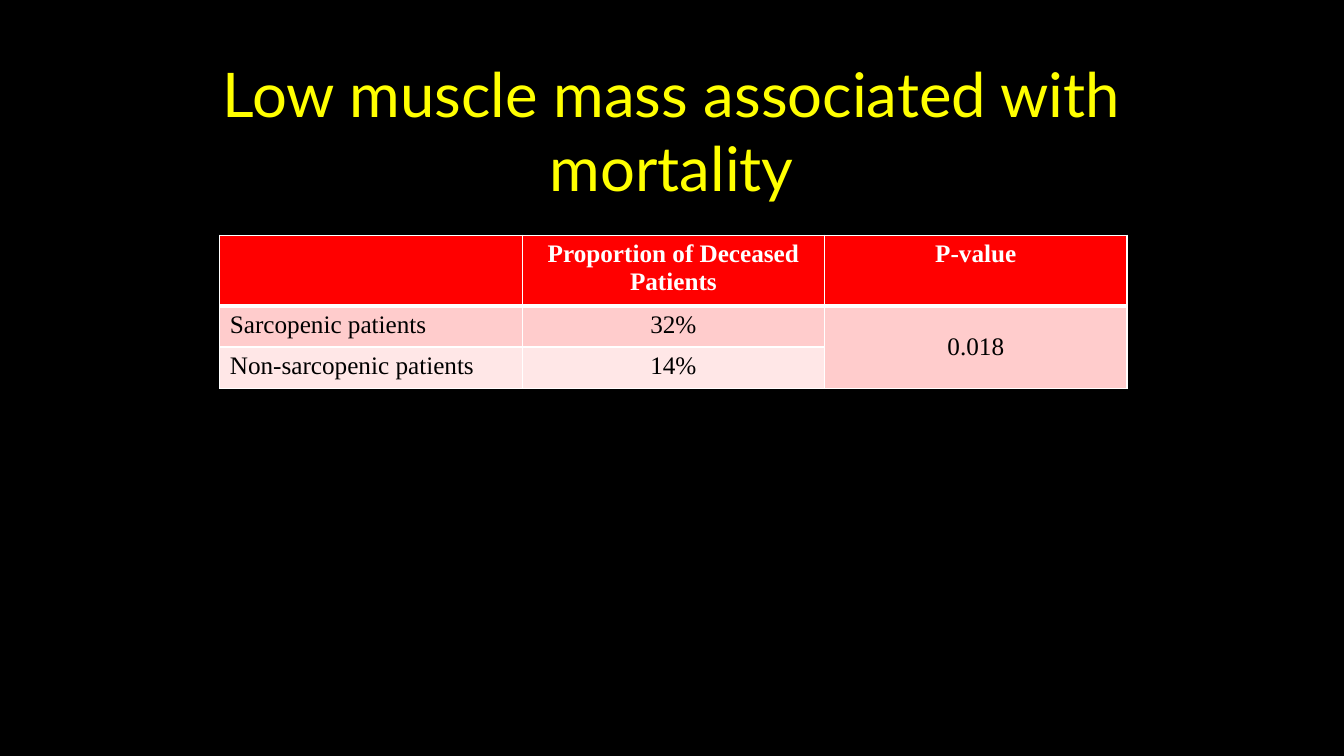
from lxml import etree
from pptx import Presentation
from pptx.dml.color import RGBColor
from pptx.enum.text import MSO_ANCHOR, PP_ALIGN
from pptx.oxml.ns import qn
from pptx.util import Pt

LEFT, CENTER = PP_ALIGN.LEFT, PP_ALIGN.CENTER
TOP, MIDDLE = MSO_ANCHOR.TOP, MSO_ANCHOR.MIDDLE

BLACK = RGBColor(0x00, 0x00, 0x00)
WHITE = RGBColor(0xFF, 0xFF, 0xFF)
YELLOW = RGBColor(0xFF, 0xFF, 0x00)
RED = RGBColor(0xFF, 0x00, 0x00)
PINK = RGBColor(0xFF, 0xCC, 0xCC)
PALE_PINK = RGBColor(0xFF, 0xE7, 0xE7)

TITLE_FONT = "Lato"
TABLE_FONT = "Times New Roman"

COLUMN_WIDTH = 216
ROW_HEIGHTS = [50.4, 29.5, 29.5]
ROW_FILLS = [RED, PINK, PALE_PINK]
MORTALITY_ROWS = [
    ["", "Proportion of Deceased Patients", "P-value"],
    ["Sarcopenic patients", "32%", "0.018"],
    ["Non-sarcopenic patients", "14%", ""],
]


def add_text(text_frame, text, font_name, size, color, alignment, bold=False):
    paragraph = text_frame.paragraphs[0]
    paragraph.alignment = alignment
    run = paragraph.add_run()
    run.text = text
    run.font.name = font_name
    run.font.size = Pt(size)
    run.font.bold = bold
    run.font.color.rgb = color


def add_title(slide, text):
    box = slide.shapes.add_textbox(Pt(72), Pt(48), Pt(816), Pt(90))
    box.text_frame.word_wrap = True
    box.text_frame.vertical_anchor = MIDDLE
    add_text(box.text_frame, text, TITLE_FONT, 44, YELLOW, CENTER)


def set_borders(cell, top, bottom):
    """Draw white cell borders; must run before the fill is set."""
    properties = cell._tc.get_or_add_tcPr()
    widths = {"a:lnL": 1, "a:lnR": 1, "a:lnT": top, "a:lnB": bottom}
    for tag, width in widths.items():
        line = etree.SubElement(properties, qn(tag), w=str(Pt(width)))
        fill = etree.SubElement(line, qn("a:solidFill"))
        etree.SubElement(fill, qn("a:srgbClr"), val=str(WHITE))


def add_mortality_table(slide):
    row_count, column_count = len(MORTALITY_ROWS), len(MORTALITY_ROWS[0])
    table = slide.shapes.add_table(
        row_count, column_count, Pt(157), Pt(168),
        Pt(COLUMN_WIDTH * column_count), Pt(sum(ROW_HEIGHTS))).table
    for column in table.columns:
        column.width = Pt(COLUMN_WIDTH)
    for row, height in zip(table.rows, ROW_HEIGHTS):
        row.height = Pt(height)

    for row_index, texts in enumerate(MORTALITY_ROWS):
        is_header = row_index == 0
        for column_index, text in enumerate(texts):
            cell = table.cell(row_index, column_index)
            set_borders(cell, top=3 if row_index == 1 else 1,
                        bottom=3 if is_header else 1)
            cell.fill.solid()
            cell.fill.fore_color.rgb = ROW_FILLS[row_index]
            cell.vertical_anchor = TOP
            if text:
                add_text(cell.text_frame, text, TABLE_FONT, 18,
                         WHITE if is_header else BLACK,
                         CENTER if is_header or column_index else LEFT,
                         bold=is_header)

    p_value = table.cell(1, 2)
    p_value.merge(table.cell(2, 2))
    p_value.vertical_anchor = MIDDLE


def main():
    presentation = Presentation()
    presentation.slide_width = Pt(960)
    presentation.slide_height = Pt(540)
    slide = presentation.slides.add_slide(presentation.slide_layouts[6])
    slide.background.fill.solid()
    slide.background.fill.fore_color.rgb = BLACK
    add_title(slide, "Low muscle mass associated with mortality")
    add_mortality_table(slide)
    presentation.save("out.pptx")


if __name__ == "__main__":
    main()
